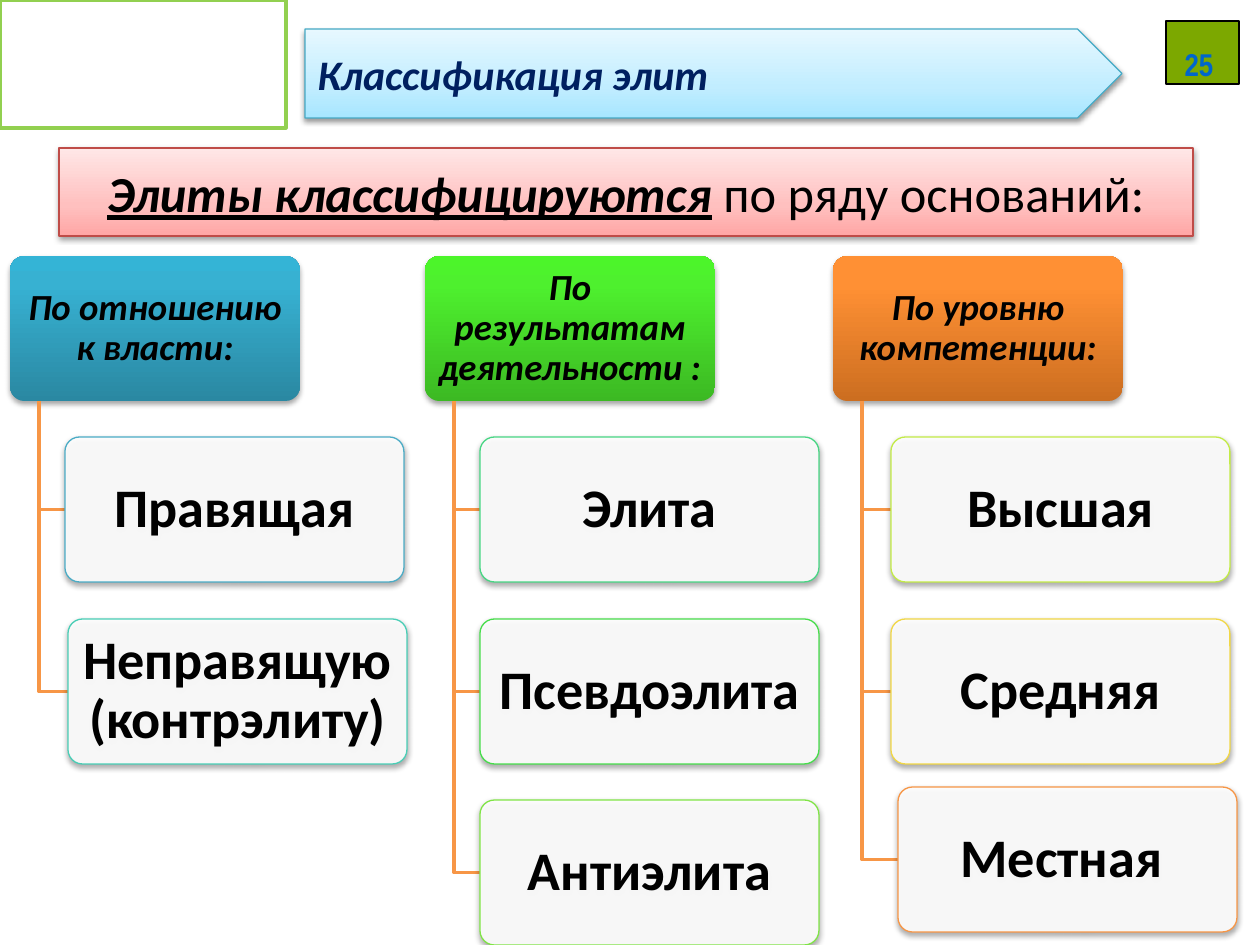
from lxml import etree
from pptx import Presentation
from pptx.dml.color import RGBColor
from pptx.enum.shapes import MSO_SHAPE
from pptx.enum.text import MSO_ANCHOR, MSO_AUTO_SIZE, PP_ALIGN
from pptx.oxml import parse_xml
from pptx.oxml.ns import nsdecls, qn
from pptx.util import Pt

RECT, ROUND, ARROW = MSO_SHAPE.RECTANGLE, MSO_SHAPE.ROUNDED_RECTANGLE, MSO_SHAPE.PENTAGON
LEFT, MID = PP_ALIGN.LEFT, PP_ALIGN.CENTER
SCALE = 914400 / 126  # EMU in one px

HUES = {
    "text": "000000", "navy": "002060", "white": "FFFFFF", "branch": "F79646",
    "frame": "92D050", "badge": "7CA800", "num": "0066CC", "glow": "99CCFF",
    "red": "BF4C48", "blue": "46AAC5",
}
# Gradients run from the bottom up: (percent, colour)
FADES = {
    "red": [(0, "FFA6A5"), (35, "FFC0BF"), (100, "FFE7E7")],
    "blue": [(0, "A7E6FF"), (35, "C1EDFF"), (100, "E7F8FF")],
    "teal": [(0, "2A88A2"), (80, "37B1D2"), (100, "34B4D6")],
    "green": [(0, "3CB923"), (80, "4EF02E"), (100, "4CF52A")],
    "orange": [(0, "CC6E20"), (80, "FF9034"), (100, "FF9136")],
}
TITLE = [("Элиты классифицируются", True), (" по ряду оснований:", False)]
TOPIC = "Классификация элит"
PAGE = "25"
# Head, left, fade, then kinds: (text, left, top, line colour)
GROUPS = [
    ("По отношению к власти:", 10, "teal", [
        ("Правящая", 65, 437, "4BACC6"),
        ("Неправящую (контрэлиту)", 68, 619, "49CEB6")]),
    ("По результатам деятельности :", 425, "green", [
        ("Элита", 480, 437, "48D684"),
        ("Псевдоэлита", 480, 619, "47DD4B"),
        ("Антиэлита", 480, 800, "80E446")]),
    ("По уровню компетенции:", 833, "orange", [
        ("Высшая", 891, 437, "C3EB46"),
        ("Средняя", 891, 619, "F1D746"),
        ("Местная ", 898, 787, "F79646")]),
]
HEAD_TOP, HEAD_W, KIND_W, BOX_H, STEM = 256, 290, 339, 145, 29


def px(n):
    return round(n * SCALE)


def rgb(code):
    return RGBColor.from_string(code)


def edge(shape, code, width):
    shape.line.color.rgb = rgb(code)
    shape.line.width = Pt(width)


def fade(shape, stops):
    shape.fill.gradient()
    old = shape._element.spPr.find(qn("a:gradFill"))
    marks = "".join(f'<a:gs pos="{at * 1000}"><a:srgbClr val="{code}"/></a:gs>'
                    for at, code in stops)
    new = parse_xml(f'<a:gradFill {nsdecls("a")} rotWithShape="1"><a:gsLst>{marks}</a:gsLst>'
                    '<a:lin ang="16200000" scaled="0"/></a:gradFill>')
    old.getparent().replace(old, new)


def shade(shape, alpha, dist):
    shape.shadow.inherit = False
    shape._element.spPr.find(qn("a:effectLst")).append(parse_xml(
        f'<a:outerShdw {nsdecls("a")} blurRad="40000" dist="{dist}" dir="5400000" '
        f'rotWithShape="0"><a:srgbClr val="000000"><a:alpha val="{alpha * 1000}"/>'
        '</a:srgbClr></a:outerShdw>'))


def add(kind, *box):
    shape = slide.shapes.add_shape(kind, *map(px, box))
    shape.shadow.inherit = False
    return shape


def write(para, text, size, hue="text", bold=True, slant=False, face="Calibri"):
    run = para.add_run()
    run.text = text
    font = run.font
    font.name, font.size, font.bold, font.italic = face, Pt(size), bold, slant
    font.color.rgb = rgb(HUES[hue])
    return run


def start(shape, align=MID, pad=None):
    frame = shape.text_frame
    frame.word_wrap = True
    frame.vertical_anchor = MSO_ANCHOR.MIDDLE
    para = frame.paragraphs[0]
    para.alignment = align
    if pad:
        frame.margin_left = frame.margin_right = px(pad[0])
        frame.margin_top = frame.margin_bottom = px(pad[1])
        para.line_spacing = 0.9
    return para


def card(left, top, width):
    shape = add(ROUND, left, top, width, BOX_H)
    shape.adjustments[0] = 0.1
    shade(shape, 35, 23000)
    return shape


def branch(x, top, right, low):
    pen = slide.shapes.build_freeform(px(x), px(top))
    pen.add_line_segments([(px(x), px(low)), (px(right), px(low))], close=False)
    shape = pen.convert_to_shape()
    shape.shadow.inherit = False
    shape.fill.background()
    edge(shape, HUES["branch"], 2)


deck = Presentation()
deck.slide_width, deck.slide_height = px(1260), px(945)
slide = deck.slides.add_slide(deck.slide_layouts[5])

# Title band
title = slide.shapes.title
title.left, title.top, title.width, title.height = map(px, (59, 148, 1134, 88))
fade(title, FADES["red"])
edge(title, HUES["red"], 0.75)
shade(title, 38, 20000)
para = start(title)
title.text_frame.auto_size = MSO_AUTO_SIZE.NONE
for text, strong in TITLE:
    write(para, text, 28.8, bold=strong, slant=strong).font.underline = strong

# Three groups of cards with their branches
for head, left, tint, kinds in GROUPS:
    top = card(left, HEAD_TOP, HEAD_W)
    fade(top, FADES[tint])
    top.line.fill.background()
    write(start(top, pad=(5, 4)), head, 21, slant=True)
    for text, x, y, line in kinds:
        branch(left + STEM, HEAD_TOP + BOX_H, x, y + BOX_H / 2)
        kind = card(x, y, KIND_W)
        kind.fill.solid()
        kind.fill.fore_color.rgb = rgb(HUES["white"])
        tone = kind._element.spPr.find(qn("a:solidFill"))[0]
        etree.SubElement(tone, qn("a:alpha"), val="90000")
        edge(kind, line, 0.75)
        write(start(kind, pad=(7, 5)), text, 31)

# Empty frame
frame = add(RECT, 0, 0, 286, 128)
frame.fill.background()
edge(frame, HUES["frame"], 2)

# Page badge
badge = add(RECT, 1166, 21, 73, 63)
badge.fill.solid()
badge.fill.fore_color.rgb = rgb(HUES["badge"])
edge(badge, HUES["text"], 0.75)
label = slide.shapes.add_textbox(*map(px, (1179, 39, 40, 29)))
label.text_frame.word_wrap = False
label.text_frame.margin_left = label.text_frame.margin_right = 0
para = label.text_frame.paragraphs[0]
para.alignment = MID
num = write(para, PAGE, 18, "num", face="Arial Narrow")
num.font._element.insert(0, parse_xml(
    f'<a:ln {nsdecls("a")} w="19050"><a:solidFill><a:srgbClr val="{HUES["glow"]}"/>'
    '</a:solidFill></a:ln>'))

# Topic arrow
topic = add(ARROW, 305, 29, 817, 89)
fade(topic, FADES["blue"])
edge(topic, HUES["blue"], 0.75)
shade(topic, 38, 20000)
write(start(topic, LEFT), TOPIC, 24, "navy", slant=True)

deck.save("out.pptx")
